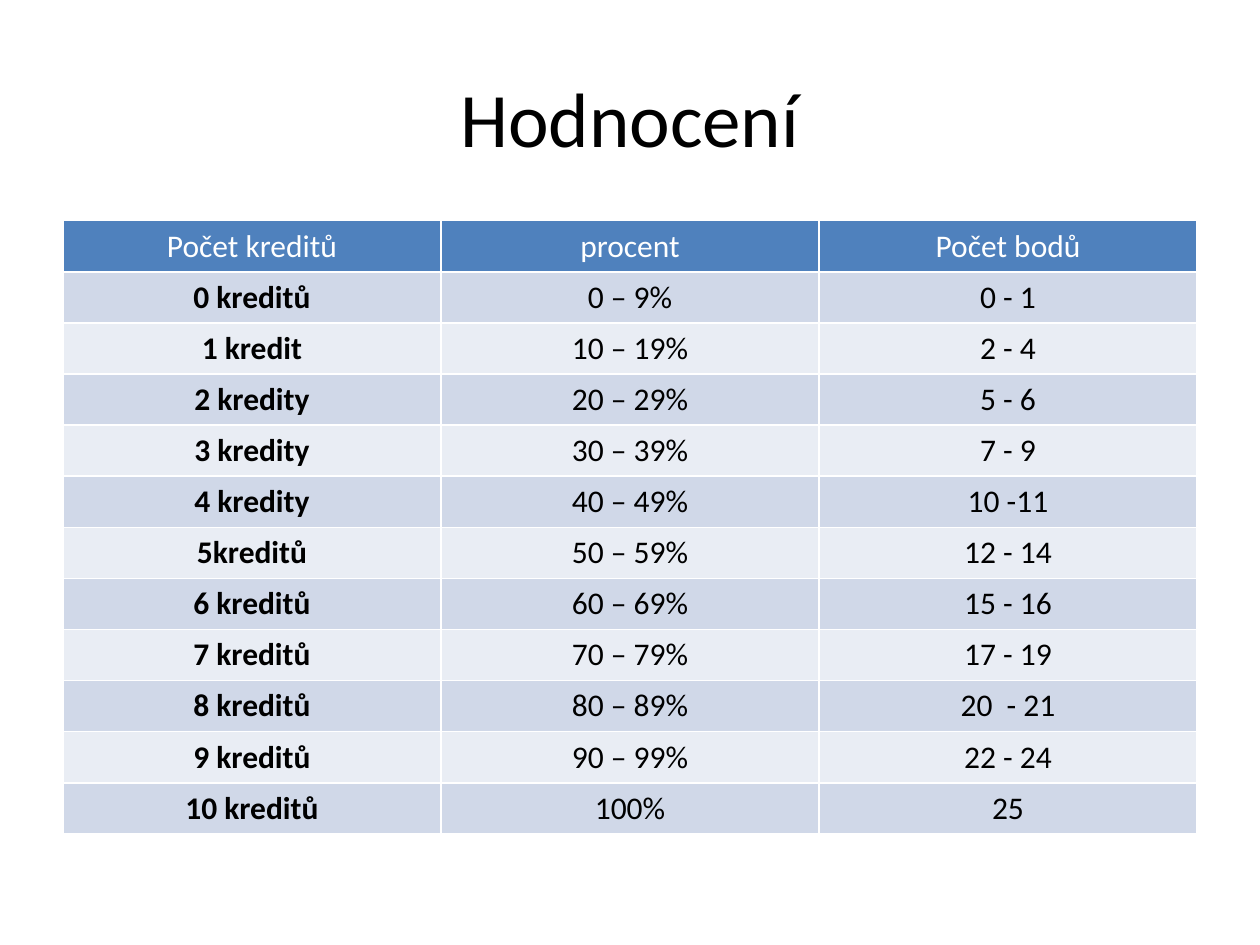
from lxml import etree
from pptx import Presentation
from pptx.dml.color import RGBColor
from pptx.enum.text import MSO_ANCHOR, PP_ALIGN
from pptx.oxml.ns import qn
from pptx.util import Cm, Pt

CENTER = PP_ALIGN.CENTER
MIDDLE = MSO_ANCHOR.MIDDLE

BLACK = RGBColor(0x00, 0x00, 0x00)
WHITE = RGBColor(0xFF, 0xFF, 0xFF)
HEADER_BLUE = RGBColor(0x4F, 0x81, 0xBD)
BANDS = (RGBColor(0xD0, 0xD8, 0xE8), RGBColor(0xE9, 0xED, 0xF4))

FONT = "Calibri"

GRADES = [
    ("Počet kreditů", "procent", "Počet bodů"),
    ("0 kreditů", "0 – 9%", "0 - 1"),
    ("1 kredit", "10 – 19%", "2 - 4"),
    ("2 kredity", "20 – 29%", "5 - 6"),
    ("3 kredity", "30 – 39%", "7 - 9"),
    ("4 kredity", "40 – 49%", "10 -11"),
    ("5kreditů", "50 – 59%", "12 - 14"),
    ("6 kreditů", "60 – 69%", "15 - 16"),
    ("7 kreditů", "70 – 79%", "17 - 19"),
    ("8 kreditů", "80 – 89%", "20  - 21"),
    ("9 kreditů", "90 – 99%", "22 - 24"),
    ("10 kreditů", "100%", "25"),
]


def style_paragraph(p, size, color, bold=False):
    p.alignment = CENTER
    p.font.name = FONT
    p.font.size = Pt(size)
    p.font.bold = bold
    p.font.color.rgb = color


def set_borders(cell, color, width):
    tc_pr = cell._tc.get_or_add_tcPr()
    for side in ("a:lnL", "a:lnR", "a:lnT", "a:lnB"):
        ln = etree.SubElement(tc_pr, qn(side), w=str(Pt(width)))
        fill = etree.SubElement(ln, qn("a:solidFill"))
        etree.SubElement(fill, qn("a:srgbClr"), val=str(color))


def add_title(s, text, left, top, width, height):
    tf = s.shapes.add_textbox(left, top, width, height).text_frame
    tf.word_wrap = True
    tf.vertical_anchor = MIDDLE
    p = tf.paragraphs[0]
    p.text = text
    style_paragraph(p, 44, BLACK)


def add_grade_table(s, rows, left, top, width, height):
    table = s.shapes.add_table(len(rows), len(rows[0]), left, top, width, height).table
    for i, row in enumerate(rows):
        header = i == 0
        for j, text in enumerate(row):
            cell = table.cell(i, j)
            set_borders(cell, WHITE, 1)
            cell.fill.solid()
            cell.fill.fore_color.rgb = HEADER_BLUE if header else BANDS[(i - 1) % 2]
            p = cell.text_frame.paragraphs[0]
            p.text = text
            # Only the credit column below the header is bold
            style_paragraph(p, 18, WHITE if header else BLACK, bold=j == 0 and not header)


def main():
    prs = Presentation()
    prs.slide_width, prs.slide_height = Cm(25.4), Cm(19.05)
    s = prs.slides.add_slide(prs.slide_layouts[6])

    # Title above the grading table, both on the same margins
    margin = Cm(1.27)
    width = prs.slide_width - 2 * margin
    add_title(s, "Hodnocení", margin, Cm(0.76), width, Cm(3.18))
    add_grade_table(s, GRADES, margin, Cm(4.45), width, Cm(1.03) * len(GRADES))

    prs.save("out.pptx")


if __name__ == "__main__":
    main()
